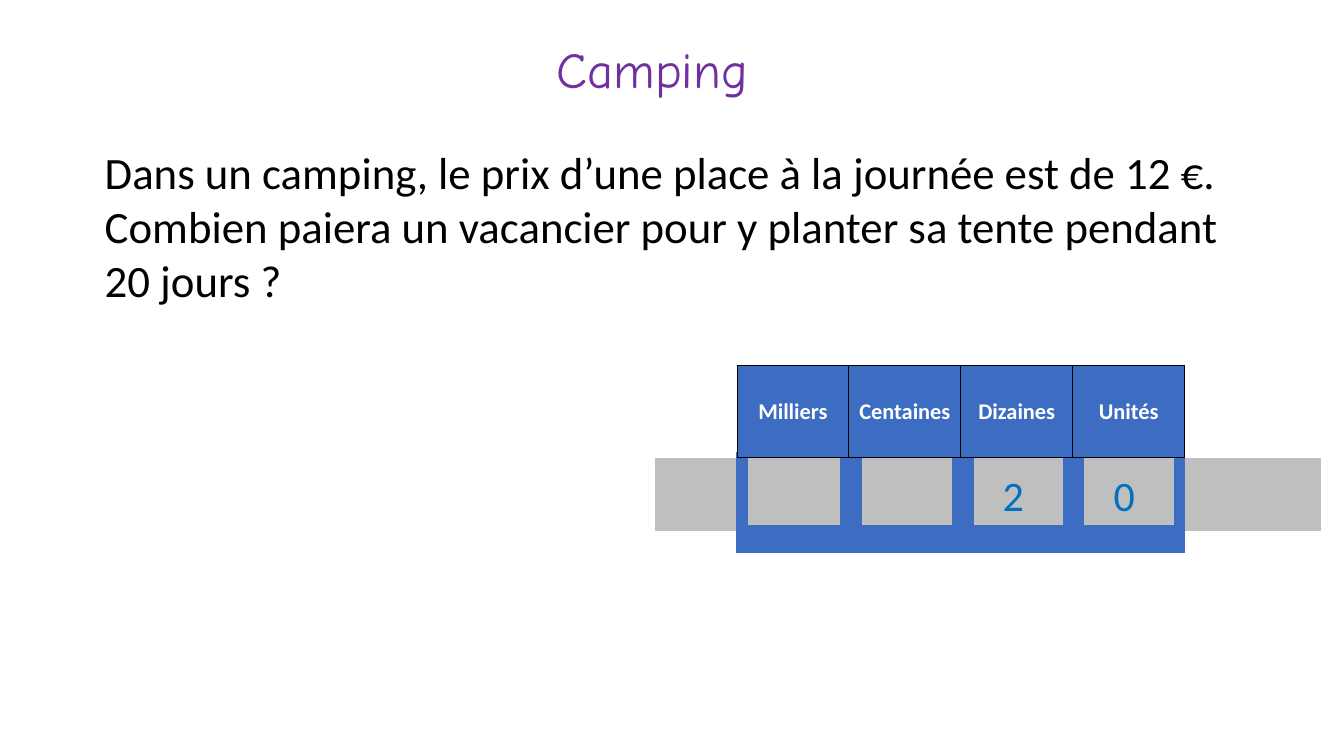
from lxml import etree
from pptx import Presentation
from pptx.dml.color import RGBColor
from pptx.enum.shapes import MSO_SHAPE
from pptx.enum.text import MSO_ANCHOR, PP_ALIGN
from pptx.oxml.ns import qn
from pptx.util import Inches, Pt

RECTANGLE = MSO_SHAPE.RECTANGLE
MIDDLE = MSO_ANCHOR.MIDDLE
LEFT, CENTER = PP_ALIGN.LEFT, PP_ALIGN.CENTER

BLACK = RGBColor(0x00, 0x00, 0x00)
WHITE = RGBColor(0xFF, 0xFF, 0xFF)
PURPLE = RGBColor(0x70, 0x30, 0xA0)
GREY = RGBColor(0xBF, 0xBF, 0xBF)
BLUE = RGBColor(0x3D, 0x6D, 0xC3)
DIGIT_BLUE = RGBColor(0x00, 0x70, 0xC0)

BODY_FONT, TITLE_FONT = "Calibri", "Comic Neue"

TABLE_LEFT, TABLE_TOP, COLUMN_WIDTH, HEADER_HEIGHT = 7.31, 3.63, 1.11, 0.91
HEADINGS = ["Milliers", "Centaines", "Dizaines", "Unités"]
BORDER_WIDTHS = {"a:lnL": 0.75, "a:lnR": 0.75, "a:lnT": 0.75, "a:lnB": 1}


class SlideBuilder:
    def __init__(self, slide):
        self.slide = slide

    def style(self, paragraph, size, color, font=BODY_FONT, align=LEFT, bold=False):
        paragraph.alignment = align
        for run in paragraph.runs:
            run.font.name = font
            run.font.size = Pt(size)
            run.font.color.rgb = color
            run.font.bold = bold

    def text(self, box, lines, size, color, font=BODY_FONT, align=LEFT, spacing=None):
        shape = self.slide.shapes.add_textbox(*map(Inches, box))
        frame = shape.text_frame
        frame.word_wrap = True
        frame.text = "\n".join(lines)
        for paragraph in frame.paragraphs:
            self.style(paragraph, size, color, font, align)
            paragraph.line_spacing = spacing

    def rectangle(self, box, color):
        shape = self.slide.shapes.add_shape(RECTANGLE, *map(Inches, box))
        shape.shadow.inherit = False
        shape.fill.solid()
        shape.fill.fore_color.rgb = color
        shape.line.color.rgb = color
        shape.line.width = Pt(1)
        return shape

    def digit_strip(self, box, digits):
        """Draw a strip with digits centred on tab stops, given as {stop: digit}."""
        shape = self.rectangle(box, GREY)
        self.set_margins(shape.text_frame)
        shape.text_frame.vertical_anchor = MIDDLE
        paragraph = shape.text_frame.paragraphs[0]
        paragraph.text = "".join("\t" + digit for digit in digits.values())
        self.style(paragraph, 30, DIGIT_BLUE)
        properties = paragraph._p.get_or_add_pPr()
        stops = etree.SubElement(properties, qn("a:tabLst"))
        for stop in digits:
            etree.SubElement(stops, qn("a:tab"), pos=str(Inches(stop)), algn="ctr")

    def set_margins(self, target):
        target.margin_left = target.margin_right = Inches(0.07)
        target.margin_top = target.margin_bottom = Inches(0.04)

    def set_borders(self, cell):
        properties = cell._tc.get_or_add_tcPr()
        for index, (tag, width) in enumerate(BORDER_WIDTHS.items()):
            line = etree.Element(qn(tag), w=str(Pt(width)))
            fill = etree.SubElement(line, qn("a:solidFill"))
            etree.SubElement(fill, qn("a:srgbClr"), val=str(BLACK))
            properties.insert(index, line)

    def header_table(self, left, top, headings):
        width = COLUMN_WIDTH * len(headings)
        table = self.slide.shapes.add_table(
            1, len(headings), *map(Inches, (left, top, width, HEADER_HEIGHT))
        ).table
        for column, heading in enumerate(headings):
            table.columns[column].width = Inches(COLUMN_WIDTH)
            cell = table.cell(0, column)
            cell.text = heading
            cell.vertical_anchor = MIDDLE
            self.set_margins(cell)
            self.style(cell.text_frame.paragraphs[0], 16, WHITE, align=CENTER, bold=True)
            cell.fill.solid()
            cell.fill.fore_color.rgb = BLUE
            self.set_borders(cell)


def main():
    presentation = Presentation()
    presentation.slide_width = Inches(13.33)
    presentation.slide_height = Inches(7.5)
    builder = SlideBuilder(presentation.slides.add_slide(presentation.slide_layouts[6]))

    problem = [
        "Dans un camping, le prix d’une place à la journée est de 12 €.",
        "Combien paiera un vacancier pour y planter sa tente pendant 20 jours ?",
    ]
    builder.text((0.94, 1.39, 11.51, 1.72), problem, 32, BLACK)
    builder.text((3.1, 0.4, 6.74, 0.65), ["Camping"], 36, PURPLE, TITLE_FONT, CENTER, 0.9)

    builder.digit_strip((6.5, 4.55, 6.6, 0.71), {3.48: "2", 4.58: "0"})

    for divider_left in (8.34, 9.45, 10.55):
        builder.rectangle((divider_left, 4.2, 0.2, 1.06), BLUE)
    for side_left in (TABLE_LEFT, 11.65):
        builder.rectangle((side_left, 4.49, 0.1, 0.77), BLUE)
    builder.rectangle((TABLE_LEFT, 5.22, 4.44, 0.26), BLUE)
    builder.header_table(TABLE_LEFT, TABLE_TOP, HEADINGS)

    presentation.save("out.pptx")


if __name__ == "__main__":
    main()
